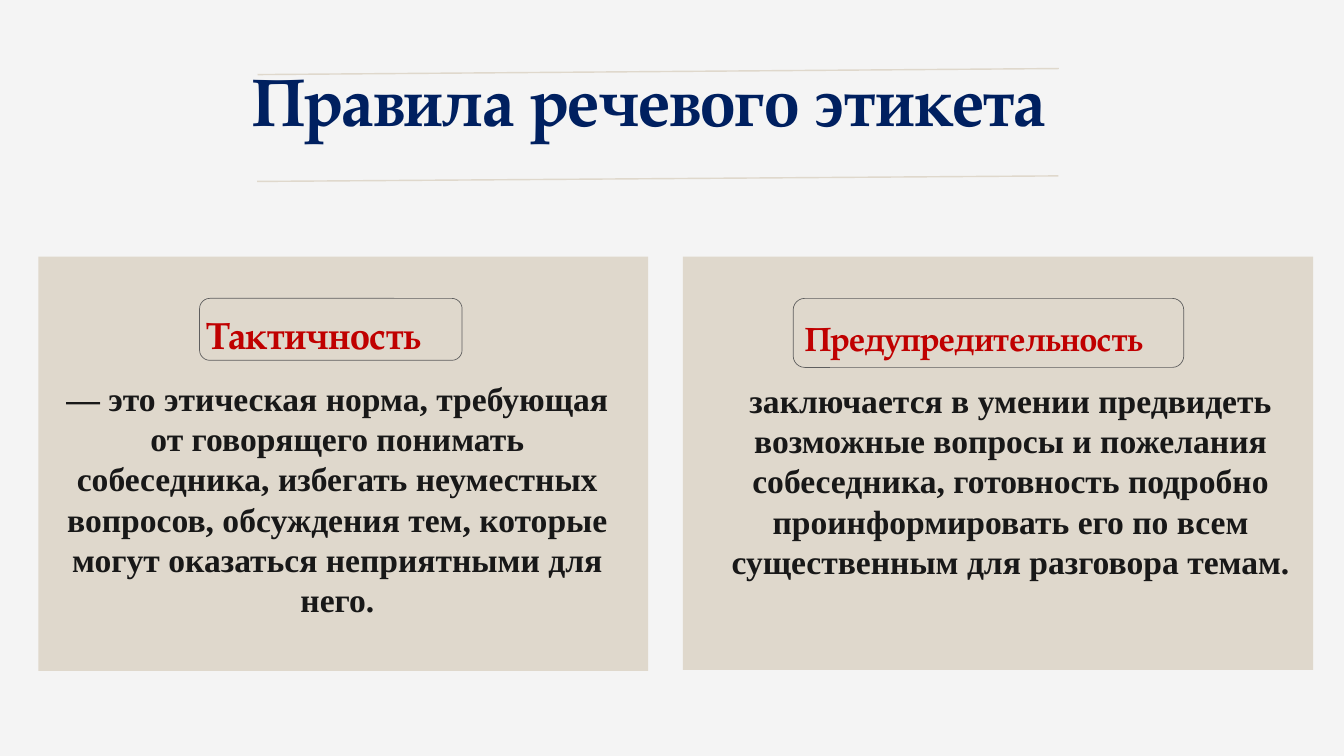
from lxml.etree import SubElement
from pptx import Presentation
from pptx.dml.color import RGBColor
from pptx.enum.shapes import MSO_CONNECTOR, MSO_SHAPE
from pptx.enum.text import PP_ALIGN
from pptx.oxml.ns import qn
from pptx.util import Inches, Pt

COLORS = {
    "background": "F4F4F4",
    "panel": "DFD8CC",
    "title": "002060",
    "heading": "C00000",
    "body": "181818",
    "frame": "5E5E5E",
}
DISPLAY_FONT = "TeX Gyre Pagella"
BODY_FONT = "Times New Roman"

TITLE = "Правила речевого этикета "
TITLE_BOX = (3.83, 1.13, 18.45, 1.75)
RULES = [((5.1, 3.6), (21, 3.49)), ((5.11, 1.48), (21.01, 1.36))]
CARDS = [
    {
        "panel": (0.76, 5.09, 12.1, 8.22),
        "frame": (3.96, 5.92, 5.21, 1.23),
        "heading": "Тактичность",
        "heading_box": (4.06, 5.97, 6.83, 0.92),
        "heading_size": 54,
        "body": "— это этическая норма, требующая от говорящего понимать "
                "собеседника, избегать неуместных вопросов, обсуждения тем, "
                "которые могут оказаться неприятными для него.",
        "body_box": (1, 7.44, 11.39, 4.95),
    },
    {
        "panel": (13.55, 5.09, 12.51, 8.2),
        "frame": (15.74, 5.92, 7.75, 1.37),
        "heading": "Предупредительность",
        "heading_box": (15.93, 6.11, 7.75, 2.1),
        "heading_size": 48,
        "body": "заключается в умении предвидеть возможные вопросы и пожелания "
                "собеседника, готовность подробно проинформировать его по всем "
                "существенным для разговора темам.",
        "body_box": (14.05, 7.48, 12.01, 4.14),
    },
]


def color(name):
    return RGBColor.from_string(COLORS[name])


def add_box(slide, kind, box, fill=None, line=None):
    shape = slide.shapes.add_shape(kind, *map(Inches, box))
    shape.shadow.inherit = False
    if fill:
        shape.fill.solid()
        shape.fill.fore_color.rgb = color(fill)
    else:
        shape.fill.background()
    if line:
        shape.line.color.rgb = color(line)
        shape.line.width = Pt(1)
    else:
        shape.line.fill.background()


def add_text(slide, text, box, size, font_name, ink, align, inset=None, spacing=None):
    frame = slide.shapes.add_textbox(*map(Inches, box)).text_frame
    frame.word_wrap = True
    if inset is not None:
        frame.margin_left = frame.margin_right = Inches(inset)
        frame.margin_top = frame.margin_bottom = Inches(inset)
    paragraph = frame.paragraphs[0]
    paragraph.text = text
    paragraph.alignment = align
    if spacing:
        paragraph.line_spacing = spacing
    font = paragraph.font
    font.name, font.size, font.bold = font_name, Pt(size), True
    font.color.rgb = color(ink)


def add_rule(slide, start, end):
    rule = slide.shapes.add_connector(MSO_CONNECTOR.STRAIGHT, *map(Inches, start + end))
    rule.line.color.rgb = color("panel")
    rule.line.width = Pt(2)
    SubElement(rule._element.spPr, qn("a:effectLst"))


def main():
    """Build the slide on the rules of speech etiquette."""
    presentation = Presentation()
    presentation.slide_width = Inches(26.67)
    presentation.slide_height = Inches(15)
    slide = presentation.slides.add_slide(presentation.slide_layouts[6])
    slide.background.fill.solid()
    slide.background.fill.fore_color.rgb = color("background")

    add_text(slide, TITLE, TITLE_BOX, 96, DISPLAY_FONT, "title", PP_ALIGN.CENTER, inset=0.04)
    for start, end in RULES:
        add_rule(slide, start, end)
    for card in CARDS:
        add_box(slide, MSO_SHAPE.RECTANGLE, card["panel"], fill="panel")
        add_text(slide, card["body"], card["body_box"], 48, BODY_FONT, "body", PP_ALIGN.CENTER)
        add_text(slide, card["heading"], card["heading_box"], card["heading_size"],
                 DISPLAY_FONT, "heading", PP_ALIGN.LEFT, inset=0.04, spacing=1.2)
        add_box(slide, MSO_SHAPE.ROUNDED_RECTANGLE, card["frame"], line="frame")

    presentation.save("out.pptx")


if __name__ == "__main__":
    main()
